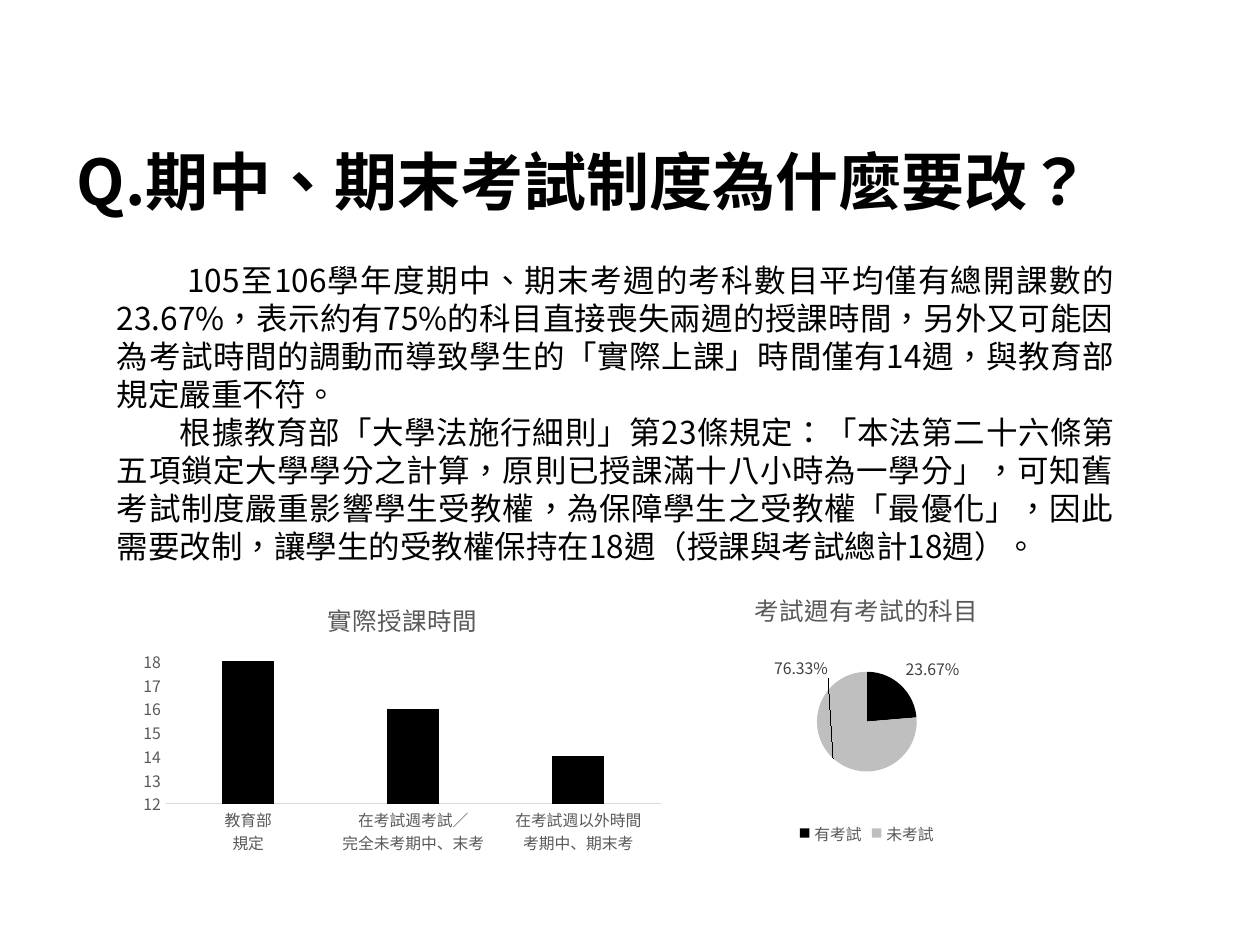
"""Build a slide on exam reform with two paragraphs, a column chart and a pie chart."""
from dataclasses import dataclass

from lxml import etree
from pptx import Presentation
from pptx.chart.data import CategoryChartData
from pptx.dml.color import RGBColor
from pptx.enum.chart import XL_CHART_TYPE, XL_LABEL_POSITION, XL_LEGEND_POSITION, XL_TICK_MARK
from pptx.enum.lang import MSO_LANGUAGE_ID
from pptx.enum.text import PP_ALIGN
from pptx.oxml.ns import qn
from pptx.util import Inches, Pt

COLUMN = XL_CHART_TYPE.COLUMN_CLUSTERED
PIE = XL_CHART_TYPE.PIE
OUT_END = XL_LABEL_POSITION.OUTSIDE_END
BOTTOM = XL_LEGEND_POSITION.BOTTOM
NO_TICK = XL_TICK_MARK.NONE
CHINESE = MSO_LANGUAGE_ID.TRADITIONAL_CHINESE
JUSTIFY = PP_ALIGN.JUSTIFY
LEFT = PP_ALIGN.LEFT

FACE = "Noto Sans CJK SC"
COLORS = {"ink": "000000", "text": "595959", "label": "404040",
          "line": "D9D9D9", "pale": "BFBFBF"}


@dataclass
class Para:
    text: str
    indent: float = 0


@dataclass
class Block:
    box: tuple
    size: float
    bold: bool
    align: PP_ALIGN
    pitch: object
    paras: list


@dataclass
class Graph:
    kind: XL_CHART_TYPE
    box: tuple
    title: str
    cats: list
    vals: list
    form: str
    plot: tuple


BLOCKS = [
    Block((0.51, 1.15, 9, 1.25), 36, True, LEFT, 0.9,
          [Para("Q.期中、期末考試制度為什麼要改？")]),
    Block((0.83, 2.02, 8.11, 2.52), 18, False, JUSTIFY, Pt(21.7), [
        Para("105至106學年度期中、期末考週的考科數目平均僅有總開課數的23.67%，"
             "表示約有75%的科目直接喪失兩週的授課時間，另外又可能因為考試時間的調動"
             "而導致學生的「實際上課」時間僅有14週，與教育部規定嚴重不符。", 0.56),
        Para("根據教育部「大學法施行細則」第23條規定：「本法第二十六條第五項鎖定大學"
             "學分之計算，原則已授課滿十八小時為一學分」，可知舊考試制度嚴重影響學生"
             "受教權，為保障學生之受教權「最優化」，因此需要改制，讓學生的受教權保持在"
             "18週（授課與考試總計18週）。", 0.5)]),
]
HOURS = Graph(COLUMN, (1.06, 4.62, 4.27, 2.2), "實際授課時間",
              ["教育部\n規定", "在考試週考試／\n完全未考期中、末考",
               "在考試週以外時間\n考期中、期末考"],
              [18, 16, 14], "General", (0.06, 0.285, 0.92, 0.515))
EXAMS = Graph(PIE, (5.64, 4.54, 2.48, 2.2), "考試週有考試的科目",
              ["有考試", "未考試"], [0.2367, 0.7633], "0.00%",
              (0.34, 0.36, 0.32, 0.36))


def style(font, size: float, color: str, bold: bool = False) -> None:
    """Set face, size and colour of a font."""
    font.name, font.size, font.bold = FACE, Pt(size), bold
    font.color.rgb = RGBColor.from_string(COLORS[color])
    latin = font._rPr.find(qn("a:latin"))
    east = etree.Element(qn("a:ea"), typeface=FACE)
    latin.addnext(east)


def layout(**parts) -> etree.Element:
    """Return a manual chart layout."""
    root = etree.Element(qn("c:layout"))
    manual = etree.SubElement(root, qn("c:manualLayout"))
    for name, value in parts.items():
        etree.SubElement(manual, qn(f"c:{name}"), val=str(value))
    return root


def write(slide, block: Block) -> None:
    """Add a text block."""
    frame = slide.shapes.add_textbox(*map(Inches, block.box)).text_frame
    frame.word_wrap = True
    frame.text = "\n".join(para.text for para in block.paras)
    for item, para in zip(frame.paragraphs, block.paras):
        item.alignment, item.line_spacing = block.align, block.pitch
        if para.indent:
            item._p.get_or_add_pPr().set("indent", str(Inches(para.indent)))
        for run in item.runs:
            style(run.font, block.size, "ink", block.bold)
            run.font.language_id = CHINESE


def plot(slide, graph: Graph):
    """Add a chart with its title and plot area."""
    data = CategoryChartData(number_format=graph.form)
    data.categories = graph.cats
    data.add_series("Series 1", graph.vals)
    chart = slide.shapes.add_chart(graph.kind, *map(Inches, graph.box), data).chart
    style(chart.font, 9, "text")
    chart.has_title = True
    chart.chart_title.include_in_layout = False
    frame = chart.chart_title.text_frame
    frame.text = graph.title
    run = frame.paragraphs[0].runs[0]
    style(run.font, 14, "text")
    run.font.language_id = CHINESE
    area = chart._chartSpace.chart.plotArea
    for old in area.findall(qn("c:layout")):
        area.remove(old)
    left, top, width, height = graph.plot
    area.insert(0, layout(layoutTarget="inner", xMode="edge", yMode="edge",
                          x=left, y=top, w=width, h=height))
    return chart


def paint(fill, color: str) -> None:
    """Give a solid fill."""
    fill.solid()
    fill.fore_color.rgb = RGBColor.from_string(COLORS[color])


def columns(slide, graph: Graph) -> None:
    """Draw the column chart."""
    chart = plot(slide, graph)
    chart.has_legend = False
    bars = chart.plots[0]
    bars.gap_width, bars.overlap, bars.vary_by_categories = 219, -27, False
    paint(bars.series[0].format.fill, "ink")
    for axis in (chart.category_axis, chart.value_axis):
        axis.major_tick_mark = axis.minor_tick_mark = NO_TICK
        axis.has_major_gridlines = False
        style(axis.tick_labels.font, 9, "text")
    line = chart.category_axis.format.line
    line.width = Pt(0.75)
    paint(line.fill, "line")
    scale = chart.value_axis
    scale.minimum_scale, scale.maximum_scale, scale.major_unit = 12, 18, 1
    scale.format.line.fill.background()


def pie(slide, graph: Graph) -> None:
    """Draw the pie chart."""
    chart = plot(slide, graph)
    chart.has_legend = True
    chart.legend.position = BOTTOM
    chart.legend.include_in_layout = False
    style(chart.legend.font, 9, "text")
    disc = chart.plots[0]
    disc.vary_by_categories = True
    series = disc.series[0]
    labels = series.data_labels
    labels.show_value = True
    labels.number_format, labels.number_format_is_linked = graph.form, False
    labels.position = OUT_END
    style(labels.font, 9, "label")
    for place, color in enumerate(("ink", "pale")):
        paint(series.points[place].format.fill, color)
    label = series.points[1].data_label
    style(label.font, 9, "label")
    label.position = OUT_END
    mark = series._element.find(f".//{qn('c:dLbl')}/{qn('c:idx')}")
    mark.addnext(layout(x=0, y=-0.39))


def main() -> None:
    """Build and save the slide."""
    deck = Presentation()
    deck.slide_width, deck.slide_height = Inches(10), Inches(7.5)
    slide = deck.slides.add_slide(deck.slide_layouts[6])
    for block in BLOCKS:
        write(slide, block)
    columns(slide, HOURS)
    pie(slide, EXAMS)
    deck.save("out.pptx")


if __name__ == "__main__":
    main()
